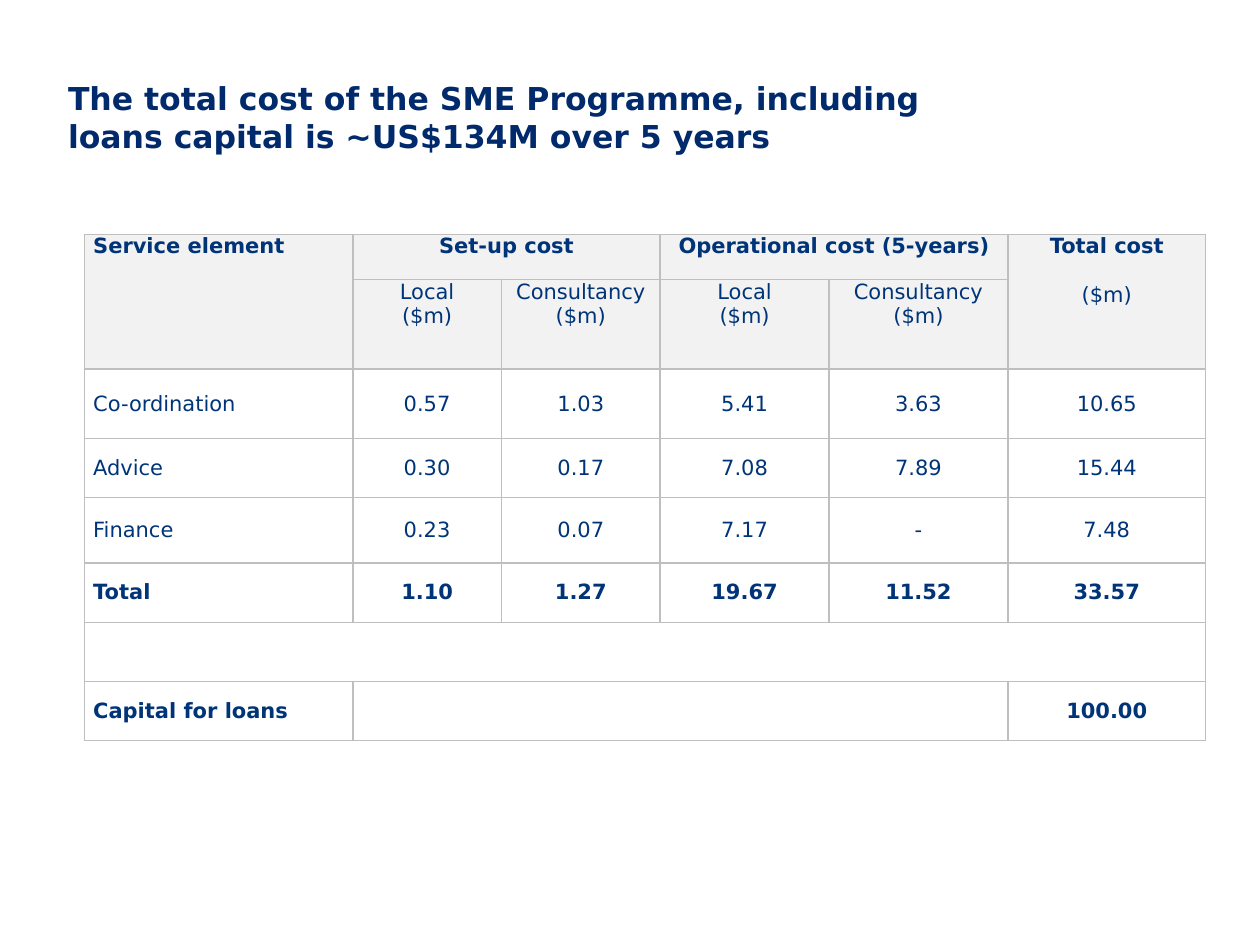
import pptx
import pptx.dml.color
import pptx.enum.text
import pptx.oxml
import pptx.oxml.ns
import pptx.util

COLORS = {"title": "002A6C", "text": "003478", "head": "F2F2F2", "body": "FFFFFF", "border": "BFBFBF"}
FONT = "DejaVu Sans"
COLUMNS, ROWS = 100, 75
COLUMN_WIDTHS = [21.3, 11.8, 12.6, 13.4, 14.2, 15.7]
ROW_HEIGHTS = [3.6, 7.1, 5.5, 4.7, 5.2, 4.7, 4.7, 4.7]
HEAD_ROWS = 2
HEADS = [
    ["Service element", "Set-up cost", "", "Operational cost (5-years)", "", "Total cost"],
    ["", "Local", "Consultancy", "Local", "Consultancy", ""],
]
BODY = [
    ["Co-ordination", "0.57", "1.03", "5.41", "3.63", "10.65"],
    ["Advice", "0.30", "0.17", "7.08", "7.89", "15.44"],
    ["Finance", "0.23", "0.07", "7.17", "-", "7.48"],
    ["Total", "1.10", "1.27", "19.67", "11.52", "33.57"],
    [""] * 6,
    ["Capital for loans", "", "", "", "", "100.00"],
]
BOLD_ROWS = {0, 5, 7}
MERGES = [((0, 0), (1, 0)), ((0, 1), (0, 2)), ((0, 3), (0, 4)),
          ((0, 5), (1, 5)), ((6, 0), (6, 5)), ((7, 1), (7, 4))]
ANCHOR = pptx.enum.text.MSO_ANCHOR
ALIGN = pptx.enum.text.PP_ALIGN


def grid(units):
    return pptx.util.Inches(units / 10)


def rgb(name):
    return pptx.dml.color.RGBColor.from_string(COLORS[name])


def add_span(para, text, size, color, bold=False):
    span = para.add_run()
    span.text = text
    span.font.name = FONT
    span.font.size = pptx.util.Pt(size)
    span.font.bold = bold
    span.font.color.rgb = rgb(color)


def add_title(page, text):
    box = page.shapes.add_textbox(grid(5), grid(3), grid(72.6), grid(12.5))
    frame = box.text_frame
    frame.word_wrap = True
    frame.vertical_anchor = ANCHOR.MIDDLE
    frame.margin_left = frame.margin_right = grid(0.4)
    frame.margin_top = frame.margin_bottom = grid(0.4)
    add_span(frame.paragraphs[0], text, 18, "title", True)


def add_borders(cell):
    properties = cell._tc.get_or_add_tcPr()
    for index, side in enumerate("LRTB"):
        line = pptx.oxml.parse_xml(
            f'<a:ln{side} {pptx.oxml.ns.nsdecls("a")} w="12700"><a:solidFill>'
            f'<a:srgbClr val="{COLORS["border"]}"/></a:solidFill></a:ln{side}>')
        properties.insert(index, line)


def style_cell(cell, row, column):
    is_head = row < HEAD_ROWS
    cell.fill.solid()
    cell.fill.fore_color.rgb = rgb("head" if is_head else "body")
    cell.vertical_anchor = ANCHOR.TOP if is_head else ANCHOR.MIDDLE
    cell.margin_left = cell.margin_right = grid(0.7 if is_head or column == 0 else 0)
    cell.margin_top = cell.margin_bottom = 0
    add_borders(cell)


def fill_cell(cell, lines, column, bold, gap=0):
    for index, (text, is_bold) in enumerate(zip(lines, bold)):
        frame = cell.text_frame
        para = frame.add_paragraph() if index else frame.paragraphs[0]
        para.alignment = ALIGN.CENTER if column else ALIGN.LEFT
        if index and gap:
            para.space_before = pptx.util.Pt(gap)
        add_span(para, text, 12, "text", is_bold)


def add_cost_table(page):
    values = HEADS + BODY
    frame = page.shapes.add_table(
        len(ROW_HEIGHTS), len(COLUMN_WIDTHS), grid(6.7), grid(18.6),
        grid(sum(COLUMN_WIDTHS)), grid(sum(ROW_HEIGHTS)))
    table = frame.table
    table.first_row = table.horz_banding = False
    for column, width in zip(table.columns, COLUMN_WIDTHS):
        column.width = grid(width)
    for row, height in zip(table.rows, ROW_HEIGHTS):
        row.height = grid(height)
    for row, texts in enumerate(values):
        for column, text in enumerate(texts):
            cell = table.cell(row, column)
            style_cell(cell, row, column)
            if not text:
                continue
            has_unit = row == 1 or text == "Total cost"
            lines = [text, "($m)"] if has_unit else [text]
            fill_cell(cell, lines, column, [row in BOLD_ROWS, False], 14 if row == 0 else 0)
    for first, last in MERGES:
        table.cell(*first).merge(table.cell(*last))


def main():
    deck = pptx.Presentation()
    deck.slide_width, deck.slide_height = grid(COLUMNS), grid(ROWS)
    page = deck.slides.add_slide(deck.slide_layouts[6])
    add_title(page, "The total cost of the SME Programme, including loans capital is ~US$134M over 5 years")
    add_cost_table(page)
    deck.save("out.pptx")


if __name__ == "__main__":
    main()
